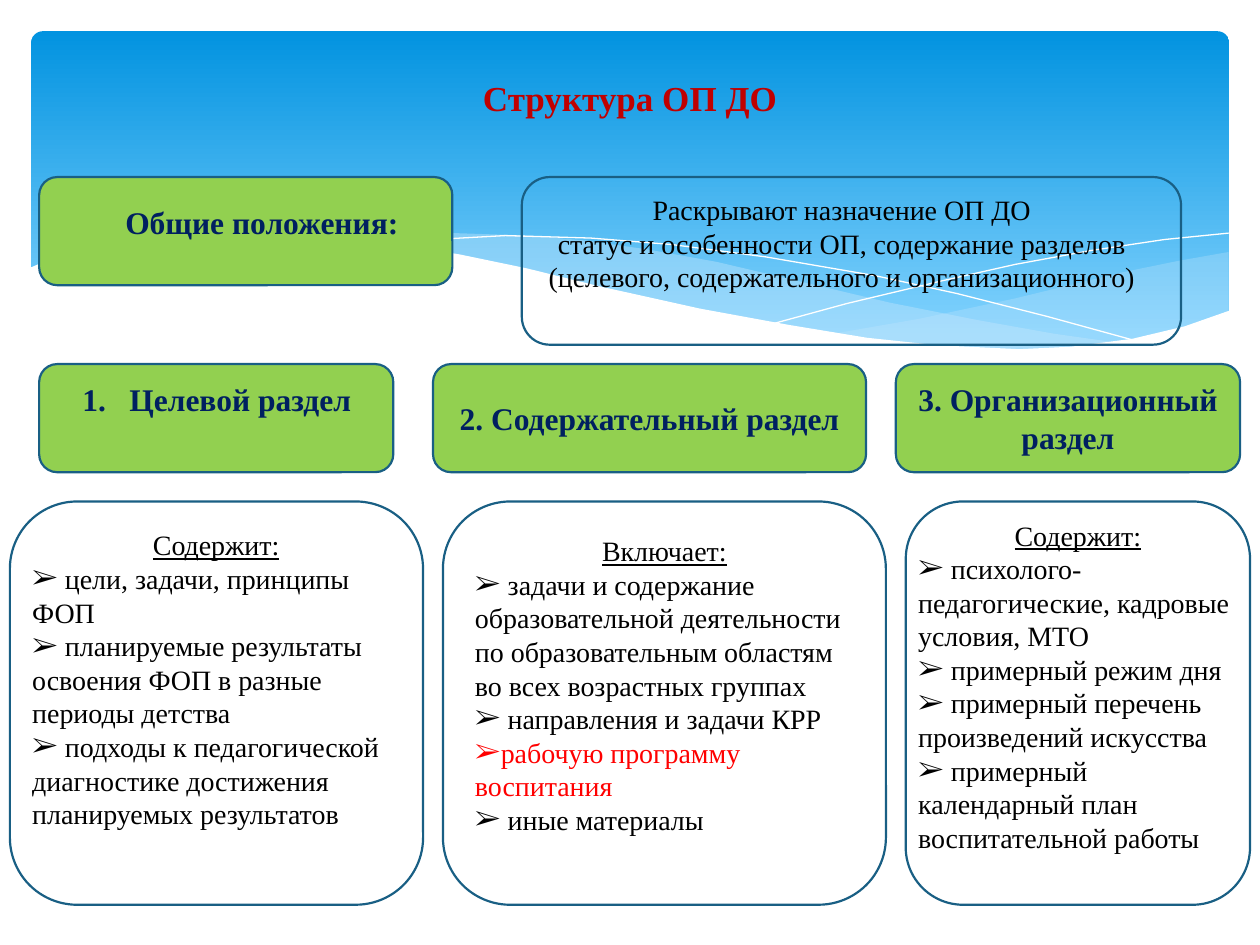
from dataclasses import dataclass
from typing import Optional

from lxml.etree import SubElement
from pptx import Presentation
from pptx.dml.color import RGBColor
from pptx.enum.shapes import MSO_SHAPE as Preset
from pptx.enum.text import MSO_ANCHOR as Anchor, MSO_AUTO_SIZE as AutoSize, PP_ALIGN as Align
from pptx.oxml.ns import qn
from pptx.util import Cm, Pt

FONT = "Times New Roman"
GREEN, NAVY, BORDER = "92D050", "002060", "195F84"
BLACK, RED, WHITE = "000000", "FF0000", "FFFFFF"
PALE = "C6E7FC"


@dataclass
class Box:
    left: float
    top: float
    width: float
    height: float

    def emu(self) -> list:
        return [Cm(v) for v in (self.left, self.top, self.width, self.height)]


@dataclass
class Line:
    text: str
    size: int = 16
    color: str = BLACK
    bold: bool = False
    underline: bool = False
    bullet: bool = False
    numbered: bool = False


@dataclass
class Wave:
    points: list
    fill: Optional[str] = None
    opacity: int = 100


def rgb(code: str) -> RGBColor:
    return RGBColor.from_string(code)


def heading(text: str, numbered: bool = False) -> Line:
    return Line(text, 18, NAVY, bold=True, numbered=numbered)


def item(text: str, color: str = BLACK) -> Line:
    return Line(text, color=color, bullet=True)


def write(frame, lines: list, anchor=Anchor.TOP) -> None:
    frame.word_wrap = True
    frame.vertical_anchor = anchor
    for number, line in enumerate(lines):
        paragraph = frame.paragraphs[0] if number == 0 else frame.add_paragraph()
        paragraph.text = line.text
        paragraph.alignment = Align.LEFT if line.bullet else Align.CENTER
        props = paragraph._p.get_or_add_pPr()
        if line.bullet:
            SubElement(props, qn("a:buFont"), typeface=FONT)
            SubElement(props, qn("a:buChar"), char="➢")
        if line.numbered:
            props.set("marL", str(Cm(0.95)))
            props.set("indent", str(-Cm(0.95)))
            SubElement(props, qn("a:buFont"), typeface="+mj-lt")
            SubElement(props, qn("a:buAutoNum"), type="arabicPeriod")
        font = paragraph.font
        font.name, font.size, font.bold = FONT, Pt(line.size), line.bold
        font.underline = line.underline
        font.color.rgb = rgb(line.color)


def add_card(slide, box: Box, fill: Optional[str] = None):
    card = slide.shapes.add_shape(Preset.ROUNDED_RECTANGLE, *box.emu())
    card.shadow.inherit = False
    if fill:
        card.fill.solid()
        card.fill.fore_color.rgb = rgb(fill)
    else:
        card.fill.background()
    card.line.color.rgb = rgb(BORDER)
    card.line.width = Pt(1.25)
    return card


def add_text(slide, box: Box, lines: list) -> None:
    frame = slide.shapes.add_textbox(*box.emu()).text_frame
    write(frame, lines)
    frame.auto_size = AutoSize.SHAPE_TO_FIT_TEXT


def add_wave(slide, wave: Wave) -> None:
    start, *rest = [(Cm(x), Cm(y)) for x, y in wave.points]
    builder = slide.shapes.build_freeform(*start)
    builder.add_line_segments(rest, close=wave.fill is not None)
    shape = builder.convert_to_shape()
    shape.shadow.inherit = False
    if wave.fill is None:
        shape.fill.background()
        shape.line.color.rgb = rgb(WHITE)
        shape.line.width = Pt(0)
        return
    shape.fill.solid()
    shape.fill.fore_color.rgb = rgb(wave.fill)
    shape.line.fill.background()
    if wave.opacity < 100:
        color = shape._element.spPr.find(qn("a:solidFill"))[0]
        SubElement(color, qn("a:alpha"), val=str(wave.opacity * 1000))


WAVES = [
    Wave([(24.77, 5.08), (23.75, 5.26), (22.63, 5.49), (20.45, 6.02), (18.52, 6.43),
          (16.79, 6.73), (17.91, 6.88), (19.23, 7.01), (20.68, 7.06), (22.15, 6.96),
          (23.39, 6.73), (24.1, 6.53), (24.77, 6.27)], PALE, 29),
    Wave([(22.68, 6.93), (21.26, 6.73), (19.69, 6.45), (17.93, 6.1), (15.98, 5.64),
          (14.45, 5.28), (13.06, 5.03), (11.81, 4.85), (10.67, 4.75), (9.17, 4.7),
          (7.95, 4.78), (7.26, 4.85), (8.69, 5.05), (10.26, 5.36), (11.4, 5.64),
          (13.46, 6.1), (15.27, 6.48), (16.89, 6.76), (18.34, 6.96), (19.63, 7.04),
          (21.03, 7.06), (22.02, 7.01)], PALE, 40),
    Wave([(7.85, 4.95), (8.74, 4.83), (10.19, 4.75), (11.91, 4.8), (13.54, 4.93),
          (15.44, 5.18), (17.65, 5.56), (19.3, 5.92), (21.11, 6.38), (23.04, 6.91)]),
    Wave([(15.57, 6.53), (17.07, 6.12), (19, 5.66), (20.47, 5.33), (22, 5.05),
          (23.47, 4.83), (24.77, 4.7)]),
    Wave([(24.82, 6.25), (23.88, 6.58), (22.83, 6.83), (21.59, 6.99), (20.55, 7.04),
          (18.9, 6.96), (17.48, 6.81), (15.9, 6.55), (14.1, 6.22), (12.07, 5.77),
          (10.62, 5.41), (9.27, 5.13), (7.42, 4.83), (5.84, 4.7), (4.5, 4.67),
          (3.02, 4.75), (1.93, 4.95), (1.17, 5.16), (0.58, 5.41), (0.58, 8.36),
          (24.82, 8.36)], WHITE),
]

GOALS = [
    Line("Содержит:", underline=True),
    item(" цели, задачи, принципы ФОП"),
    item(" планируемые результаты освоения ФОП в разные периоды детства"),
    item(" подходы к педагогической диагностике достижения планируемых результатов"),
]
CONTENT = [
    Line("Включает:", underline=True),
    item(" задачи и содержание образовательной деятельности по образовательным "
         "областям во всех возрастных группах"),
    item(" направления и задачи КРР"),
    item("рабочую программу воспитания", RED),
    item(" иные материалы"),
]
ORGANIZATION = [
    Line("Содержит:", underline=True),
    item(" психолого-педагогические, кадровые условия, МТО"),
    item(" примерный режим дня"),
    item(" примерный перечень произведений искусства"),
    item(" примерный календарный план воспитательной работы"),
]

HEAD_TOP, HEAD_HEIGHT = 7.34, 2.18
BODY_TOP, BODY_HEIGHT = 10.11, 8.13


def main() -> None:
    deck = Presentation()
    deck.slide_width, deck.slide_height = Cm(25.4), Cm(19.05)
    slide = deck.slides.add_slide(deck.slide_layouts[6])

    # Blue banner with waves
    banner = add_card(slide, Box(0.63, 0.63, 24.15, 6.87))
    banner.adjustments[0] = 0.034
    banner.line.fill.background()
    banner.fill.gradient()
    banner.fill.gradient_angle = 270
    for stop, (position, color) in zip(banner.fill.gradient_stops,
                                       [(0, "0293E0"), (0.9, "83D3FE")]):
        stop.position = position
        stop.color.rgb = rgb(color)
    for wave in WAVES:
        add_wave(slide, wave)

    # Title
    title = slide.shapes.add_textbox(*Box(1.27, 0.76, 22.86, 2.42).emu())
    write(title.text_frame, [Line("Структура ОП ДО", 20, "C00000", bold=True)], Anchor.MIDDLE)

    # General provisions
    add_card(slide, Box(0.79, 3.57, 8.33, HEAD_HEIGHT), GREEN)
    add_card(slide, Box(10.52, 3.57, 13.29, 3.38))
    add_text(slide, Box(1.4, 3.96, 7.92, 1.03), [heading("Общие положения: ")])
    add_text(slide, Box(10.52, 3.76, 12.9, 2.31), [
        Line("Раскрывают назначение ОП ДО"),
        Line("статус и особенности ОП, содержание разделов "
             "(целевого, содержательного и организационного)"),
    ])

    # Section headings
    add_card(slide, Box(0.79, HEAD_TOP, 7.14, HEAD_HEIGHT), GREEN)
    add_text(slide, Box(0.99, 7.54, 6.76, 1.03), [heading("Целевой раздел", numbered=True)])
    for left, width, text in [(8.73, 8.73, "2. Содержательный раздел"),
                              (18.06, 6.94, "3. Организационный раздел")]:
        card = add_card(slide, Box(left, HEAD_TOP, width, HEAD_HEIGHT), GREEN)
        write(card.text_frame, [heading(text)], Anchor.MIDDLE)

    # Section contents
    goals, content, organization = [
        add_card(slide, Box(left, BODY_TOP, width, BODY_HEIGHT))
        for left, width in [(0.2, 8.33), (8.93, 8.93), (18.26, 6.94)]]
    add_text(slide, Box(0.4, 10.52, 7.92, 6.4), GOALS)
    write(content.text_frame, CONTENT, Anchor.MIDDLE)
    content.text_frame.margin_bottom = Cm(0.86)
    add_text(slide, Box(18.26, 10.32, 6.94, 7.87), ORGANIZATION)

    deck.save("out.pptx")


if __name__ == "__main__":
    main()
